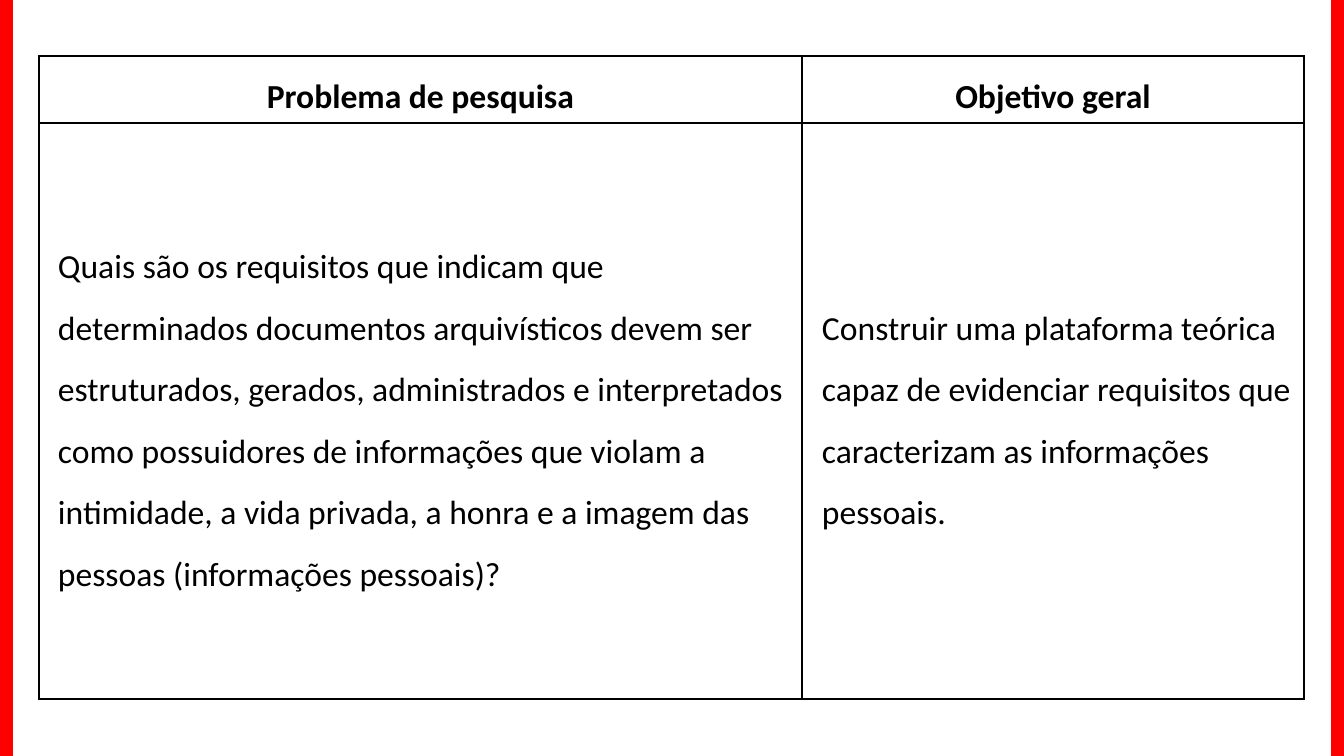
from lxml import etree
from pptx import Presentation
from pptx.dml.color import RGBColor
from pptx.enum.shapes import MSO_SHAPE
from pptx.enum.text import MSO_ANCHOR, PP_ALIGN
from pptx.oxml.ns import qn
from pptx.util import Pt

EMU_PER_PX = 9071
SLIDE_WIDTH, SLIDE_HEIGHT = 1344, 756
BAR_WIDTH = 12
TABLE_LEFT, TABLE_TOP = 39, 56
COLUMN_WIDTHS = [763, 502]
ROW_HEIGHTS = [67, 576]
CELL_INSET = 7
BODY_INDENTS = [12, 13]
FONT_NAME = "Calibri"
FONT_SIZE = 24
LINE_SPACING = 1.5
COLORS = {"bar": "FF0000", "text": "000000", "border": "000000", "cell": "FFFFFF"}
RECTANGLE = MSO_SHAPE.RECTANGLE
TOP, MIDDLE = MSO_ANCHOR.TOP, MSO_ANCHOR.MIDDLE
LEFT, CENTER = PP_ALIGN.LEFT, PP_ALIGN.CENTER

HEADINGS = ["Problema de pesquisa", "Objetivo geral"]
STATEMENTS = [
    "Quais são os requisitos que indicam que determinados documentos "
    "arquivísticos devem ser estruturados, gerados, administrados e "
    "interpretados como possuidores de informações que violam a intimidade, "
    "a vida privada, a honra e a imagem das pessoas (informações pessoais)?",
    "Construir uma plataforma teórica capaz de evidenciar requisitos que "
    "caracterizam as informações pessoais.",
]


def px(length):
    return length * EMU_PER_PX


def color(name):
    return RGBColor.from_string(COLORS[name])


def add_side_bar(slide, left):
    shape = slide.shapes.add_shape(RECTANGLE, px(left), 0, px(BAR_WIDTH), px(SLIDE_HEIGHT))
    shape.shadow.inherit = False
    shape.fill.solid()
    shape.fill.fore_color.rgb = color("bar")
    shape.line.color.rgb = color("bar")
    shape.line.width = Pt(1)


def set_borders(cell):
    properties = cell._tc.get_or_add_tcPr()
    for position, side in enumerate(("a:lnL", "a:lnR", "a:lnT", "a:lnB")):
        line = etree.Element(qn(side), w=str(Pt(1)))
        fill = etree.SubElement(line, qn("a:solidFill"))
        etree.SubElement(fill, qn("a:srgbClr"), val=COLORS["border"])
        properties.insert(position, line)


def fill_cell(cell, text, bold, alignment, anchor, indent):
    cell.fill.solid()
    cell.fill.fore_color.rgb = color("cell")
    set_borders(cell)
    cell.margin_left = cell.margin_right = px(CELL_INSET)
    cell.margin_top = cell.margin_bottom = 0
    cell.vertical_anchor = anchor
    paragraph = cell.text_frame.paragraphs[0]
    paragraph.alignment = alignment
    paragraph.line_spacing = LINE_SPACING
    paragraph._p.get_or_add_pPr().set("marL", str(px(indent)))
    run = paragraph.add_run()
    run.text = text
    run.font.name = FONT_NAME
    run.font.size = Pt(FONT_SIZE)
    run.font.bold = bold
    run.font.color.rgb = color("text")


def add_research_table(slide):
    frame = slide.shapes.add_table(
        len(ROW_HEIGHTS), len(COLUMN_WIDTHS), px(TABLE_LEFT), px(TABLE_TOP),
        px(sum(COLUMN_WIDTHS)), px(sum(ROW_HEIGHTS)),
    )
    table = frame.table
    table.horz_banding = False
    for row, height in zip(table.rows, ROW_HEIGHTS):
        row.height = px(height)
    for index, width in enumerate(COLUMN_WIDTHS):
        table.columns[index].width = px(width)
        fill_cell(table.cell(0, index), HEADINGS[index], True, CENTER, TOP, 0)
        fill_cell(table.cell(1, index), STATEMENTS[index], False, LEFT, MIDDLE, BODY_INDENTS[index])


def main():
    presentation = Presentation()
    presentation.slide_width = px(SLIDE_WIDTH)
    presentation.slide_height = px(SLIDE_HEIGHT)
    slide = presentation.slides.add_slide(presentation.slide_layouts[6])
    add_research_table(slide)
    for left in (0, SLIDE_WIDTH - BAR_WIDTH):
        add_side_bar(slide, left)
    presentation.save("out.pptx")


if __name__ == "__main__":
    main()
